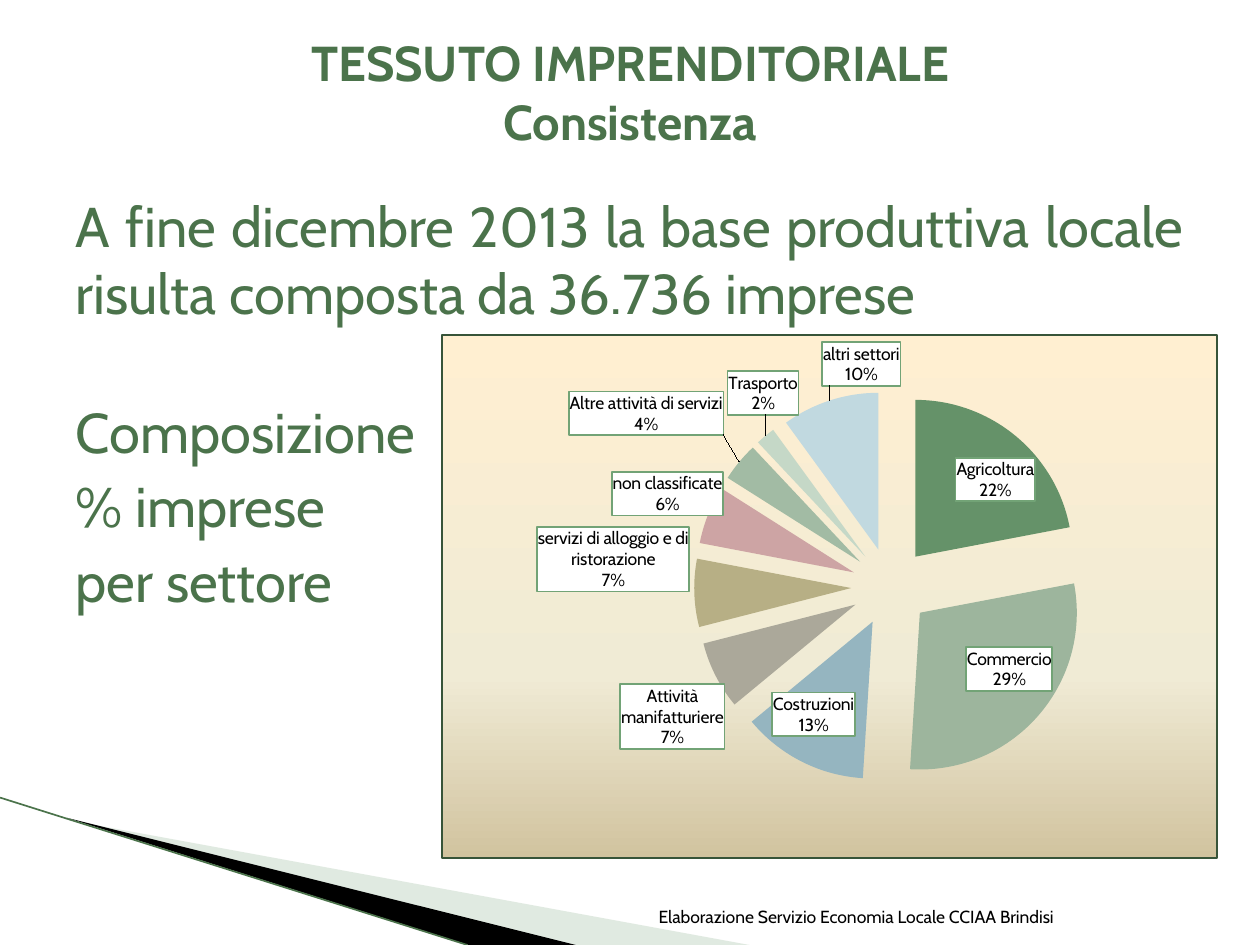
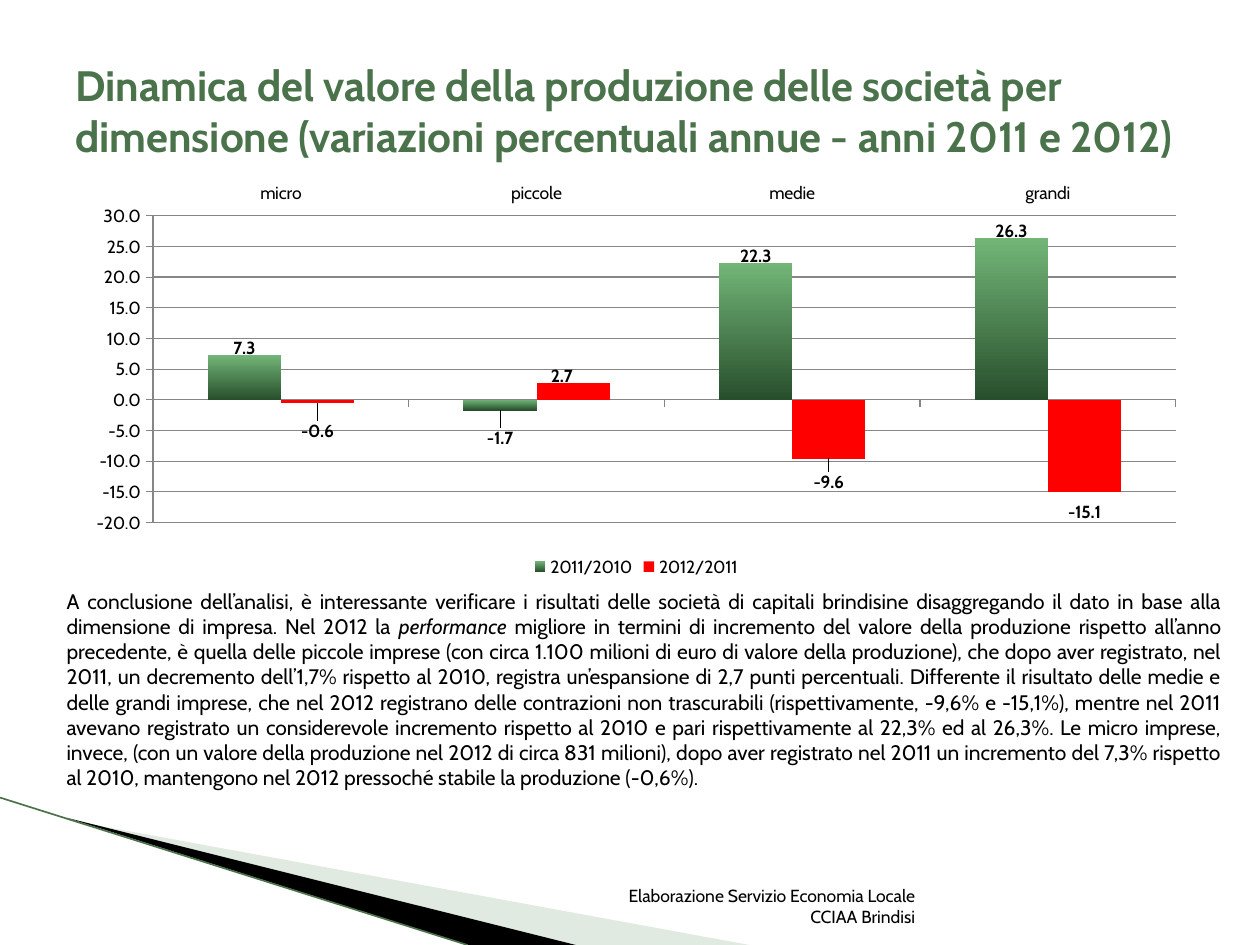
"""Two slides on the businesses of the Brindisi area: sectors and output by size."""
from math import cos, pi, sin

from lxml.etree import SubElement
from pptx import Presentation
from pptx.chart.data import CategoryChartData
from pptx.dml.color import RGBColor
from pptx.enum.chart import (XL_CHART_TYPE, XL_LEGEND_POSITION,
                             XL_TICK_LABEL_POSITION, XL_TICK_MARK)
from pptx.enum.shapes import MSO_CONNECTOR
from pptx.enum.text import MSO_ANCHOR, MSO_AUTO_SIZE, PP_ALIGN
from pptx.oxml import parse_xml
from pptx.oxml.ns import nsdecls, qn
from pptx.util import Inches, Pt

FONT = "Cabin"
GREEN = RGBColor(0x4B, 0x73, 0x4B)
PALE_GREEN = RGBColor(0xB3, 0xCB, 0xB5)
BLACK = RGBColor(0, 0, 0)
RED = RGBColor(0xFF, 0, 0)
GRID_GREY = RGBColor(0x86, 0x86, 0x86)
BAR_TOP = RGBColor(0x72, 0xB5, 0x77)
BAR_BOTTOM = RGBColor(0x28, 0x4F, 0x2C)
LABEL_BORDER = RGBColor(0x72, 0xA3, 0x76)
FRAME_GREEN = RGBColor(0x37, 0x54, 0x39)
PANEL_STOPS = [(0, RGBColor(0xFF, 0xEF, 0xD1)), (65, RGBColor(0xF0, 0xEB, 0xD5)),
               (100, RGBColor(0xD1, 0xC3, 0x9F))]

CREDIT = "Elaborazione Servizio Economia Locale CCIAA Brindisi"
PIE_BOX = (3.5, 2.65, 6.17, 4.17)
PIE_CENTRE = (7.06, 4.66)
PIE_LABEL_RADIUS = 0.93
SECTORS = [
    ("Agricoltura", 22, RGBColor(0x65, 0x92, 0x69), (7.89, 3.81)),
    ("Commercio", 29, RGBColor(0x9D, 0xB5, 0x9D), (8.0, 5.31)),
    ("Costruzioni", 13, RGBColor(0x95, 0xB5, 0xC0), (6.45, 5.67)),
    ("Attività manifatturiere", 7, RGBColor(0xAB, 0xA8, 0x9A), (5.33, 5.69)),
    ("servizi di alloggio e di ristorazione", 7, RGBColor(0xB7, 0xAF, 0x85), (4.86, 4.44)),
    ("non classificate", 6, RGBColor(0xCD, 0xA4, 0xA4), (5.29, 3.92)),
    ("Altre attività di servizi", 4, RGBColor(0xA2, 0xBB, 0xA4), (5.12, 3.28)),
    ("Trasporto", 2, RGBColor(0xC5, 0xD8, 0xC7), (6.05, 3.12)),
    ("altri settori", 10, RGBColor(0xC1, 0xD9, 0xE0), (6.83, 2.89)),
]
SIZES = ["micro", "piccole", "medie", "grandi"]
GROWTH = {
    "2011/2010": (7.3, -1.7, 22.3, 26.3),
    "2012/2011": (-0.6, 2.7, -9.6, -15.1),
}
GROWTH_OFFSETS = {
    "2011/2010": [(0, 0.02), (0, 0.03), (0, 0.02), (0, 0.02)],
    "2012/2011": [(0, 0.03), (-0.01, 0.02), (0, 0.02), (0, 0.01)],
}
COMMENT = [
    ("A conclusione dell’analisi, è interessante verificare i risultati delle società di "
     "capitali brindisine disaggregando il dato in base alla dimensione di impresa. "
     "Nel 2012 la ", False),
    ("performance", True),
    (" migliore in termini di incremento del valore della produzione rispetto all’anno "
     "precedente, è quella delle piccole imprese (con circa 1.100 milioni di euro di valore "
     "della produzione), che dopo aver registrato, nel 2011, un decremento dell’1,7% rispetto "
     "al 2010, registra un’espansione di 2,7 punti percentuali. ", False),
    ("Differente il risultato delle "
     "medie e delle grandi imprese, che nel 2012 registrano delle contrazioni non trascurabili "
     "(rispettivamente, -9,6% e -15,1%), mentre nel 2011 avevano registrato un considerevole "
     "incremento rispetto al 2010 e pari rispettivamente al 22,3% ed al 26,3%. ", False),
    ("Le micro "
     "imprese, invece, (con un valore della produzione nel 2012 di circa 831 milioni), dopo "
     "aver registrato nel 2011 un incremento del 7,3% rispetto al 2010, mantengono nel 2012 "
     "pressoché stabile la produzione (-0,6%).", False),
]


def layout_xml(x, y, size=None):
    """Return a manual chart layout: an inner plot area if sized, else an offset."""
    modes = parts = ""
    if size:
        modes = ('<c:layoutTarget val="inner"/><c:xMode val="edge"/>'
                 '<c:yMode val="edge"/>')
        parts = f'<c:w val="{size[0]}"/><c:h val="{size[1]}"/>'
    return (f'<c:layout {nsdecls("c")}><c:manualLayout>{modes}<c:x val="{x:.4f}"/>'
            f'<c:y val="{y:.4f}"/>{parts}</c:manualLayout></c:layout>')


def add_labels(series, offsets, position, number_format, look="", bold=0, pie=False):
    """Give a series element data labels, each moved by its offset."""
    value, share = (0, 1) if pie else (1, 0)
    separator = "<c:separator>\n</c:separator>" if pie else ""
    text_look = (
        f'<c:txPr><a:bodyPr/><a:p><a:pPr><a:defRPr sz="1000" b="{bold}">'
        f'<a:solidFill><a:srgbClr val="{BLACK}"/></a:solidFill>'
        f'<a:latin typeface="{FONT}"/></a:defRPr></a:pPr></a:p></c:txPr>')
    shown = (
        f'<c:dLblPos val="{position}"/><c:showLegendKey val="0"/>'
        f'<c:showVal val="{value}"/><c:showCatName val="{share}"/><c:showSerName val="0"/>'
        f'<c:showPercent val="{share}"/><c:showBubbleSize val="0"/>{separator}')
    number = f'<c:numFmt formatCode="{number_format}" sourceLinked="0"/>'
    common = number + look + text_look + shown
    points = "".join(
        f'<c:dLbl><c:idx val="{index}"/>{layout_xml(*offset)}{common}</c:dLbl>'
        for index, offset in enumerate(offsets))
    labels = parse_xml(f'<c:dLbls {nsdecls("c", "a")}>{points}{common}</c:dLbls>')
    series.find(qn("c:cat")).addprevious(labels)


class Report:
    """Holds the deck, its style and the current page."""

    def __init__(self):
        """Start an empty deck."""
        self.deck = Presentation()
        self.deck.slide_width, self.deck.slide_height = Inches(10), Inches(7.5)
        self.page = None

    def start_page(self, layout_index):
        """Add a page with the corner bands."""
        layout = self.deck.slide_layouts[layout_index]
        self.page = self.deck.slides.add_slide(layout)
        self.band([(0.55, 6.51), (5.95, 7.5), (4.56, 7.5)], PALE_GREEN, 40)
        self.band([(0.53, 6.49), (4.57, 7.5), (3.72, 7.5)], BLACK)
        edge = self.page.shapes.add_connector(
            MSO_CONNECTOR.STRAIGHT, Inches(0), Inches(6.33), Inches(3.71), Inches(7.5))
        edge.line.color.rgb = GREEN
        edge.line.width = Pt(0.95)
        SubElement(edge.element.spPr, qn("a:effectLst"))

    def band(self, corners, colour, opacity=100):
        """Draw a filled wedge."""
        start, *others = [(Inches(x), Inches(y)) for x, y in corners]
        builder = self.page.shapes.build_freeform(*start)
        builder.add_line_segments(others)
        wedge = builder.convert_to_shape()
        wedge.shadow.inherit = False
        wedge.fill.solid()
        wedge.fill.fore_color.rgb = colour
        wedge.line.fill.background()
        if opacity < 100:
            tint = wedge.element.spPr.find(".//" + qn("a:srgbClr"))
            SubElement(tint, qn("a:alpha"), val=str(opacity * 1000))

    def place(self, box, left, top, width, height):
        """Set the place of a box and keep its text size fixed."""
        box.left, box.top = Inches(left), Inches(top)
        box.width, box.height = Inches(width), Inches(height)
        box.text_frame.word_wrap = True
        box.text_frame.auto_size = MSO_AUTO_SIZE.NONE

    def style(self, para, size, colour, align, bold=False):
        """Format every run of a paragraph."""
        para.alignment = align
        for span in para.runs:
            span.font.name = FONT
            span.font.size = Pt(size)
            span.font.bold = bold
            span.font.color.rgb = colour

    def title(self, text, place, size, align):
        """Fill the title placeholder."""
        box = self.page.shapes.title
        self.place(box, *place)
        box.text_frame.vertical_anchor = MSO_ANCHOR.MIDDLE
        box.text_frame.text = text
        self.style(box.text_frame.paragraphs[0], size, GREEN, align, True)

    def body(self, lines, place, size, gaps):
        """Fill the body placeholder with unbulleted lines."""
        box = self.page.placeholders[1]
        self.place(box, *place)
        box.text_frame.text = "\n".join(lines)
        for index, (para, gap) in enumerate(zip(box.text_frame.paragraphs, gaps)):
            properties = para._p.get_or_add_pPr()
            properties.set("marL", "0")
            properties.set("indent", "0")
            SubElement(properties, qn("a:buNone"))
            para.space_before = Pt(gap)
            self.style(para, size, GREEN, PP_ALIGN.LEFT if index else PP_ALIGN.JUSTIFY)

    def text(self, spans, place, size, align, anchor=MSO_ANCHOR.TOP):
        """Add a text box from (text, italic) spans."""
        box = self.page.shapes.add_textbox(0, 0, 0, 0)
        self.place(box, *place)
        box.text_frame.vertical_anchor = anchor
        para = box.text_frame.paragraphs[0]
        for words, italic in spans:
            span = para.add_run()
            span.text = words
            span.font.italic = italic
        self.style(para, size, BLACK, align)

    def credit(self, width):
        """Add the source line at the foot."""
        self.text([(CREDIT, False)], (4.79, 7.01, width, 0.4), 10,
                  PP_ALIGN.RIGHT, MSO_ANCHOR.BOTTOM)

    def chart(self, kind, categories, series, place, plot):
        """Add a chart with the shared font and a fixed plot area."""
        data = CategoryChartData()
        data.categories = categories
        for name, values in series.items():
            data.add_series(name, values)
        frame = self.page.shapes.add_chart(kind, *map(Inches, place), data)
        chart = frame.chart
        chart.has_title = False
        chart.has_legend = False
        chart.font.name = FONT
        chart.font.size = Pt(10)
        chart.font.color.rgb = BLACK
        area = chart.element.find(".//" + qn("c:plotArea"))
        for old in area.findall(qn("c:layout")):
            area.remove(old)
        area.insert(0, parse_xml(layout_xml(plot[0], plot[1], plot[2:])))
        return chart

    def sector_pie(self):
        """Add the exploded pie of sectors on its shaded panel."""
        names, values, colours, targets = zip(*SECTORS)
        chart = self.chart(XL_CHART_TYPE.PIE, names, {"Series 1": values}, PIE_BOX,
                           (0.187, 0.107, 0.783, 0.749))
        for index, colour in enumerate(colours):
            fill = chart.plots[0].series[0].points[index].format.fill
            fill.solid()
            fill.fore_color.rgb = colour
        series = chart.element.find(".//" + qn("c:ser"))
        first_point = series.find(qn("c:dPt"))
        for follower in [first_point, *series.findall(f'{qn("c:dPt")}/{qn("c:spPr")}')]:
            follower.addprevious(parse_xml(f'<c:explosion {nsdecls("c")} val="25"/>'))

        offsets = []
        done = 0
        for value, target in zip(values, targets):
            angle = 2 * pi * (done + value / 2) / sum(values)
            done += value
            x = PIE_CENTRE[0] + PIE_LABEL_RADIUS * sin(angle)
            y = PIE_CENTRE[1] - PIE_LABEL_RADIUS * cos(angle)
            offsets.append(((target[0] - x) / PIE_BOX[2], (target[1] - y) / PIE_BOX[3]))
        look = ('<c:spPr><a:solidFill><a:srgbClr val="FFFFFF"/></a:solidFill>'
                f'<a:ln w="{Pt(1)}"><a:solidFill><a:srgbClr val="{LABEL_BORDER}"/>'
                '</a:solidFill></a:ln></c:spPr>')
        add_labels(series, offsets, "ctr", "0%", look, pie=True)

        stops = "".join(f'<a:gs pos="{stop * 1000}"><a:srgbClr val="{colour}"/></a:gs>'
                        for stop, colour in PANEL_STOPS)
        chart.element.find(qn("c:chart")).addnext(parse_xml(
            f'<c:spPr {nsdecls("c", "a")}><a:gradFill><a:gsLst>{stops}</a:gsLst>'
            f'<a:lin ang="5400000" scaled="0"/></a:gradFill><a:ln w="{Pt(1.25)}">'
            f'<a:solidFill><a:srgbClr val="{FRAME_GREEN}"/></a:solidFill></a:ln></c:spPr>'))

    def growth_columns(self):
        """Add the columns of yearly change by company size."""
        chart = self.chart(XL_CHART_TYPE.COLUMN_CLUSTERED, SIZES, GROWTH,
                           (0.59, 1.39, 8.92, 3.23), (0.07, 0.1, 0.91, 0.754))
        chart.has_legend = True
        chart.legend.position = XL_LEGEND_POSITION.BOTTOM
        chart.legend.include_in_layout = False
        plot = chart.plots[0]
        plot.vary_by_categories = False
        plot.gap_width = 150
        values = chart.value_axis
        values.minimum_scale, values.maximum_scale, values.major_unit = -20, 30, 5
        values.tick_labels.number_format = "0.0"
        values.tick_labels.number_format_is_linked = False
        values.major_gridlines.format.line.color.rgb = GRID_GREY
        chart.category_axis.tick_label_position = XL_TICK_LABEL_POSITION.HIGH
        for axis in (values, chart.category_axis):
            axis.major_tick_mark = XL_TICK_MARK.OUTSIDE
            axis.format.line.color.rgb = GRID_GREY
        earlier, later = plot.series
        earlier.format.fill.gradient()
        earlier.format.fill.gradient_angle = 270
        for stop, colour in zip(earlier.format.fill.gradient_stops, (BAR_TOP, BAR_BOTTOM)):
            stop.color.rgb = colour
        later.format.fill.solid()
        later.format.fill.fore_color.rgb = RED
        elements = chart.element.findall(".//" + qn("c:ser"))
        for series, element in zip(plot.series, elements):
            series.invert_if_negative = False
            add_labels(element, GROWTH_OFFSETS[series.name], "outEnd", "0.0", bold=1)


def main():
    """Build both pages and save the deck."""
    report = Report()
    report.start_page(1)
    report.title("TESSUTO IMPRENDITORIALE\vConsistenza", (0.5, 0.3, 9, 0.85), 28,
                 PP_ALIGN.CENTER)
    report.body(["A fine dicembre 2013 la base produttiva locale risulta composta da "
                 "36.736 imprese", "Composizione", "% imprese", "per settore"],
                (0.5, 1.47, 9, 5.1), 32, (0, 41, 4, 4))
    report.sector_pie()
    report.credit(3.67)

    report.start_page(5)
    report.title("Dinamica del valore della produzione delle società per dimensione "
                 "(variazioni percentuali annue - anni 2011 e 2012)",
                 (0.5, 0.4, 9, 0.95), 24.3, PP_ALIGN.LEFT)
    report.growth_columns()
    report.text(COMMENT, (0.43, 4.62, 9.37, 1.92), 12, PP_ALIGN.JUSTIFY)
    report.credit(2.57)
    report.deck.save("out.pptx")


if __name__ == "__main__":
    main()
